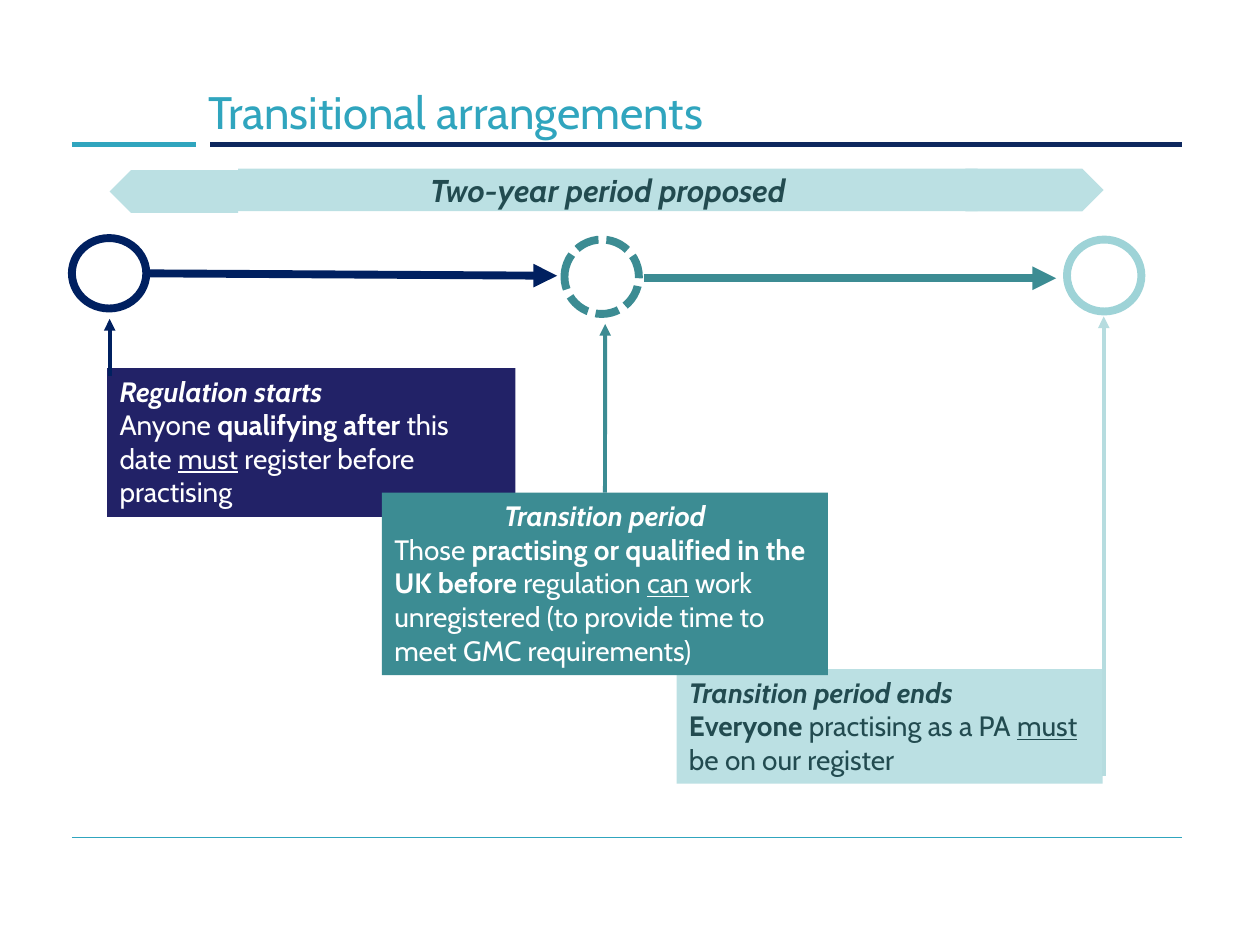
from collections import namedtuple
from dataclasses import dataclass

from lxml.etree import SubElement
from pptx import Presentation
from pptx.dml.color import RGBColor
from pptx.enum.dml import MSO_LINE
from pptx.enum.shapes import MSO_CONNECTOR, MSO_SHAPE as Shape
from pptx.enum.text import MSO_ANCHOR as Anchor, MSO_AUTO_SIZE as AutoSize, PP_ALIGN as Align
from pptx.oxml.ns import qn
from pptx.util import Cm, Pt

Box = namedtuple("Box", "left top width height")
Milestone = namedtuple("Milestone", "box fill ink arrow_color arrow_from arrow_to paragraphs joined")


@dataclass(frozen=True)
class Theme:
    font: str = "Cabin"
    title_size: float = 26
    banner_size: float = 18
    body_size: float = 16
    thin: float = 0.75
    medium: float = 2.25
    rule: float = 3
    thick: float = 4.5
    white: str = "FFFFFF"
    cyan: str = "30A5BE"
    rule_navy: str = "0E285E"
    navy: str = "002060"
    indigo: str = "222267"
    teal: str = "3C8C93"
    aqua: str = "9ED3D7"
    pale: str = "BBE0E3"
    pale_line: str = "B6DCDF"
    ink: str = "224B50"


THEME = Theme()


def write_text(shape, paragraphs, size, color, anchor=Anchor.TOP, auto_size=AutoSize.NONE):
    """Fill a shape with (alignment, runs); a run is its text and a string of b, i, u flags."""
    frame = shape.text_frame
    frame.word_wrap, frame.vertical_anchor, frame.auto_size = True, anchor, auto_size
    for index, (alignment, runs) in enumerate(paragraphs):
        paragraph = frame.add_paragraph() if index else frame.paragraphs[0]
        paragraph.alignment = alignment
        for text, flags in runs:
            run = paragraph.add_run()
            run.text = text
            font = run.font
            font.name, font.size = THEME.font, Pt(size)
            font.color.rgb = RGBColor.from_string(color)
            font.bold, font.italic, font.underline = ("b" in flags, "i" in flags, "u" in flags)


def add_shape(slide, kind, box, fill, line=None, dash=None):
    shape = slide.shapes.add_shape(kind, *map(Cm, box))
    shape.shadow.inherit = False
    shape.fill.solid()
    shape.fill.fore_color.rgb = RGBColor.from_string(fill)
    if line:
        shape.line.color.rgb = RGBColor.from_string(line)
        shape.line.width = Pt(THEME.thick)
        shape.line.dash_style = dash
    else:
        shape.line.fill.background()
    return shape


def add_line(slide, start, end, color, width, arrow=False):
    line = slide.shapes.add_connector(MSO_CONNECTOR.STRAIGHT, *map(Cm, (*start, *end)))
    line.line.color.rgb = RGBColor.from_string(color)
    line.line.width = Pt(width)
    properties = line._element.spPr
    if arrow:
        SubElement(properties.find(qn("a:ln")), qn("a:tailEnd"), type="triangle")
    SubElement(properties, qn("a:effectLst"))
    return line


def add_header(slide, box):
    title = slide.shapes.title
    title.left, title.top = Cm(box.left + 2.49), Cm(box.top)
    title.width, title.height = Cm(box.width - 2.49), Cm(box.height)
    write_text(title, [(Align.LEFT, [("Transitional arrangements", "")])],
               THEME.title_size, THEME.cyan, Anchor.MIDDLE)
    rule_y, right = box.top + 1.6, box.left + box.width
    add_line(slide, (box.left + 2.79, rule_y), (right, rule_y), THEME.rule_navy, THEME.rule)
    add_line(slide, (box.left, rule_y), (box.left + 2.51, rule_y), THEME.cyan, THEME.rule)


def add_footer_rule(slide, box):
    add_line(slide, (box.left, box.top), (box.left + box.width, box.top), THEME.cyan, THEME.thin)


def add_timeline(slide, box):
    rings = [(0, 0, 1.42, THEME.navy, None),
             (9.93, 0.03, 1.5, THEME.teal, MSO_LINE.SQUARE_DOT),
             (box.width - 1.5, 0.03, 1.45, THEME.aqua, None)]
    for x, y, height, color, dash in rings:
        ring = Box(box.left + x, box.top + y, 1.5, height)
        add_shape(slide, Shape.OVAL, ring, THEME.white, color, dash)
    for x, start_y, end_y, color in [(1.47, 0.71, 0.76, THEME.navy), (11.53, 0.81, 0.81, THEME.teal)]:
        start = (box.left + x, box.top + start_y)
        end = (box.left + x + 8.31, box.top + end_y)
        add_line(slide, start, end, color, THEME.thick, arrow=True)


def add_milestone(slide, milestone):
    """Place a text box and the arrow that rises from it to its ring."""
    box = milestone.box
    shape = add_shape(slide, Shape.RECTANGLE, box, milestone.fill)
    write_text(shape, milestone.paragraphs, THEME.body_size, milestone.ink,
               auto_size=AutoSize.SHAPE_TO_FIT_TEXT)
    x, y = milestone.arrow_from
    start = (box.left + x, box.top + y)
    arrow = add_line(slide, start, (start[0], milestone.arrow_to),
                     milestone.arrow_color, THEME.medium, arrow=True)
    if milestone.joined:
        arrow.begin_connect(shape, 0)


def add_period_banner(slide, box):
    left_tip, right_tip = 2.59, 2.79
    middle = Box(box.left + left_tip, box.top, 14.91, box.height)
    bar = add_shape(slide, Shape.RECTANGLE, middle, THEME.pale)
    write_text(bar, [(Align.CENTER, [("Two-year period proposed", "bi")])],
               THEME.banner_size, THEME.ink, Anchor.MIDDLE)
    right = Box(box.left + box.width - right_tip, box.top, right_tip, box.height)
    add_shape(slide, Shape.PENTAGON, right, THEME.pale)
    left = Box(box.left, box.top + 0.03, left_tip, box.height)
    add_shape(slide, Shape.PENTAGON, left, THEME.pale).rotation = 180


MILESTONES = [
    Milestone(Box(13.64, 13.49, 8.59, 2.31), THEME.pale, THEME.ink, THEME.pale_line,
              (8.61, 2.16), 6.38, [
                  (Align.LEFT, [("Transition period ends", "bi")]),
                  (Align.LEFT, [("Everyone", "b"), (" practising as a PA ", ""), ("must", "u"),
                                (" be on our register", "")])], False),
    Milestone(Box(2.16, 7.42, 8.23, 3), THEME.indigo, THEME.white, THEME.navy,
              (0.05, 0.15), 6.43, [
                  (Align.LEFT, [("Regulation starts", "bi")]),
                  (Align.LEFT, [("Anyone ", ""), ("qualifying after ", "b"), ("this date ", ""),
                                ("must", "u"), (" register before practising", "")])], False),
    Milestone(Box(7.7, 9.93, 8.99, 3.68), THEME.teal, THEME.white, THEME.teal,
              (4.5, 0), 6.53, [
                  (Align.CENTER, [("Transition period", "bi")]),
                  (Align.LEFT, [("Those ", ""), ("practising or qualified in the UK before", "b"),
                                (" regulation ", ""), ("can", "u"),
                                (" work unregistered (to provide time to meet GMC requirements)", "")])],
              True),
]


def main():
    presentation = Presentation()
    presentation.slide_width, presentation.slide_height = Cm(25.4), Cm(19.05)
    slide = presentation.slides.add_slide(presentation.slide_layouts[5])
    add_header(slide, Box(1.45, 1.32, 22.38, 1.85))
    add_footer_rule(slide, Box(1.45, 16.89, 22.38, 0))
    add_timeline(slide, Box(1.45, 4.8, 21.56, 1.5))
    for milestone in MILESTONES:
        add_milestone(slide, milestone)
    add_period_banner(slide, Box(2.21, 3.4, 20.04, 0.86))
    presentation.save("out.pptx")


if __name__ == "__main__":
    main()
